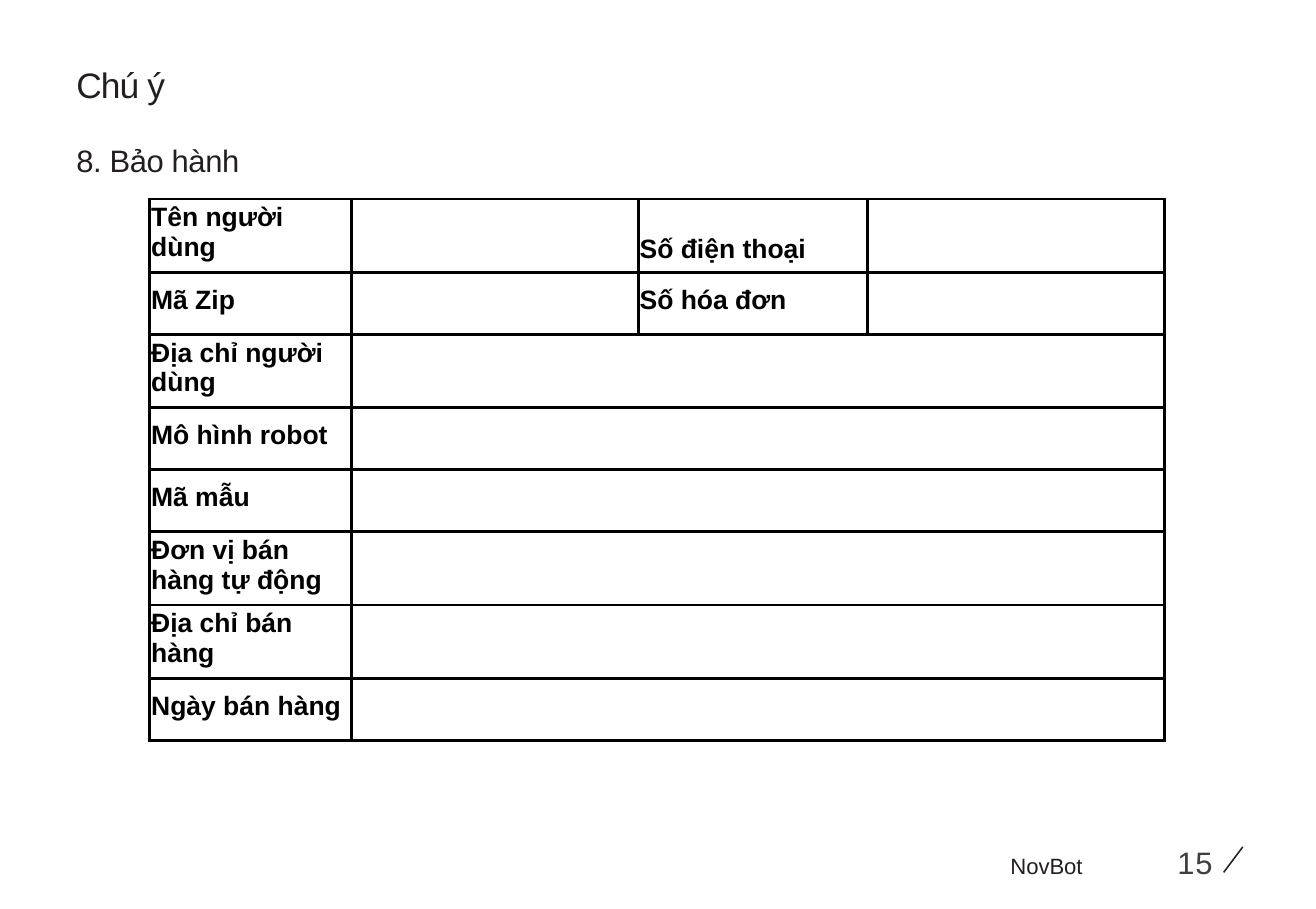
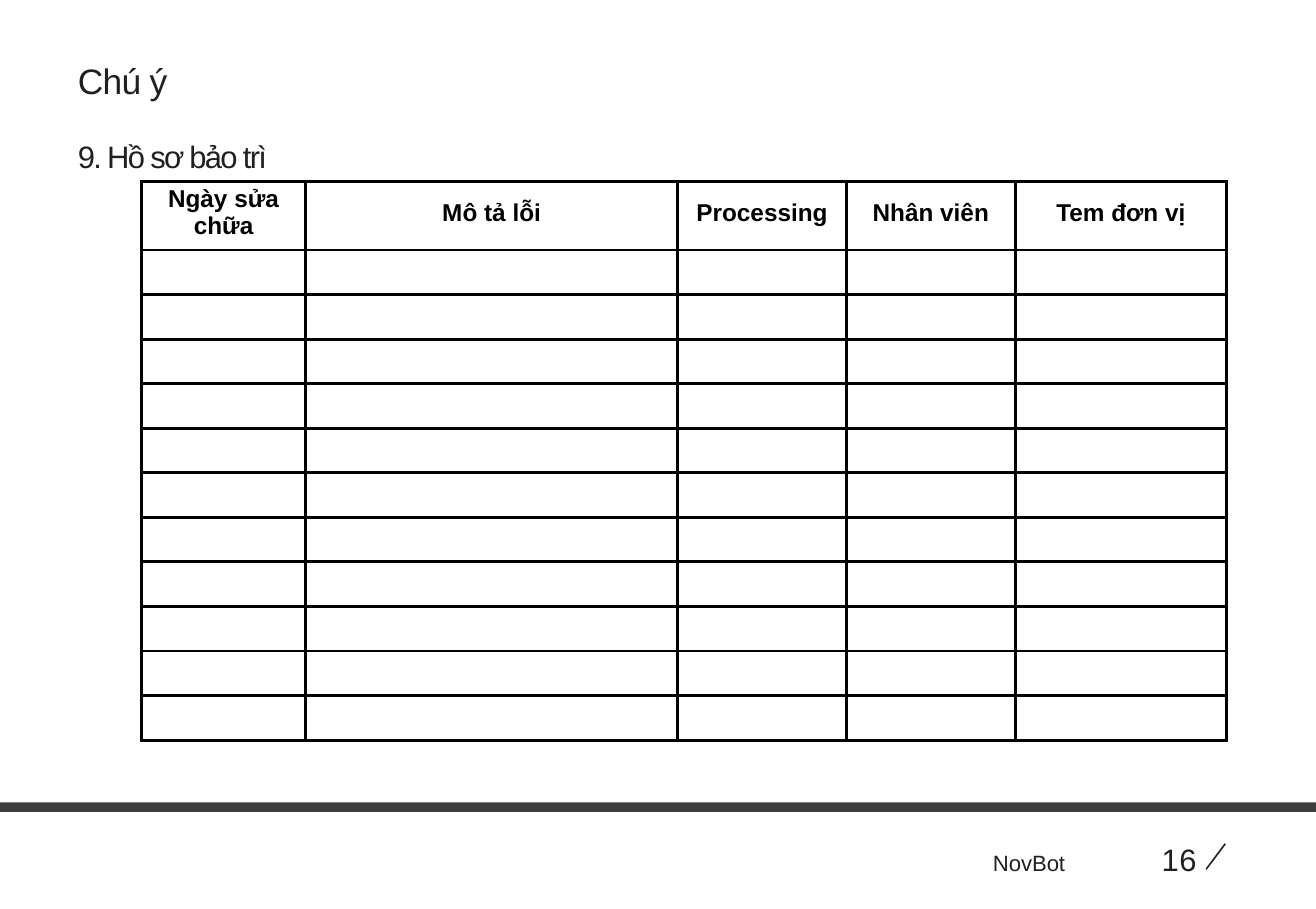
import pptx
import pptx.dml.color
import pptx.enum.shapes
import pptx.enum.text
import pptx.oxml
import pptx.oxml.ns
import pptx.util
from dataclasses import dataclass
from lxml import etree


@dataclass(frozen=True)
class Theme:
    font: str = "Arial"
    ink: str = "231F20"
    band: str = "3E3E3F"
    grid: str = "000000"
    title: int = 16
    section: int = 14
    name: int = 10
    number: int = 14
    border: float = 1.5
    slash: float = 0.71


theme = Theme()
PX = 9144  # one hundredth of an inch
qn = pptx.oxml.ns.qn
ANCHOR = pptx.enum.text.MSO_ANCHOR
ALIGN = pptx.enum.text.PP_ALIGN


def write(para, text, *, size, color=theme.ink, bold=False, spacing=0, align=ALIGN.LEFT):
    """Add one formatted span, or size the paragraph when it has no text."""
    para.alignment = align
    if not text:
        etree.SubElement(para._p, qn("a:endParaRPr"), sz=str(size * 100))
        return
    span = para.add_run()
    span.text = text
    span.font.name = theme.font
    span.font.size = pptx.util.Pt(size)
    span.font.bold = bold
    span.font.color.rgb = pptx.dml.color.RGBColor.from_string(color)
    if spacing:
        span._r.get_or_add_rPr().set("spc", str(round(spacing * 100)))


def add_grid(page, left, top, columns, heights, labels, *, size, align):
    """Add a ruled table; labels holds one list of texts per row."""
    frame = page.shapes.add_table(len(heights), len(columns), left * PX, top * PX,
                                  sum(columns) * PX, sum(heights) * PX)
    table = frame.table
    table.first_row = table.horz_banding = False
    for column, width in zip(table.columns, columns):
        column.width = width * PX
    for row, height, texts in zip(table.rows, heights, labels):
        row.height = height * PX
        for cell, text in zip(row.cells, texts):
            cell.margin_left = cell.margin_right = cell.margin_top = PX
            cell.margin_bottom = 5 * PX
            cell.vertical_anchor = ANCHOR.MIDDLE
            cell.fill.background()
            write(cell.text_frame.paragraphs[0], text, size=size,
                  color=theme.grid, bold=True, align=align)
            for order, side in enumerate(("lnL", "lnR", "lnT", "lnB")):
                line = etree.Element(qn("a:" + side), w=str(round(theme.border * 12700)))
                fill = etree.SubElement(line, qn("a:solidFill"))
                etree.SubElement(fill, qn("a:srgbClr"), val=theme.grid)
                cell._tc.get_or_add_tcPr().insert(order, line)
    return table


deck = pptx.Presentation()
deck.slide_width = 827 * PX
deck.slide_height = 571 * PX

# What differs between the pages
pages = [
    dict(section="8. Bảo hành", head=(48, 40), title_spacing=-0.4, section_spacing=-0.2,
         number="15", number_color=theme.band, foot=(635, 530), tab=105),
    dict(section="9. Hồ sơ bảo trì", head=(49, 37), title_spacing=-0.3, section_spacing=-0.8,
         number="16", number_color=theme.ink, foot=(624, 528), tab=106),
]

# Headings and footers
for item in pages:
    page = deck.slides.add_slide(deck.slide_layouts[6])

    left, top = item["head"]
    box = page.shapes.add_textbox(left * PX, top * PX, 778 * PX, 70 * PX)
    heading = box.text_frame
    footer_left, footer_top = item["foot"]
    box = page.shapes.add_textbox(footer_left * PX, footer_top * PX, 146 * PX, 24 * PX)
    footer = box.text_frame
    for text_frame in (heading, footer):
        text_frame.word_wrap = True
        text_frame.margin_left = text_frame.margin_right = 0
        text_frame.margin_top = text_frame.margin_bottom = 0

    write(heading.paragraphs[0], "Chú ý", size=theme.title, spacing=item["title_spacing"])
    para = heading.add_paragraph()
    para.line_spacing = pptx.util.Pt(33)
    write(para, item["section"], size=theme.section, spacing=item["section_spacing"])

    para = footer.paragraphs[0]
    tabs = etree.SubElement(para._p.get_or_add_pPr(), qn("a:tabLst"))
    etree.SubElement(tabs, qn("a:tab"), pos=str(item["tab"] * PX), algn="l")
    write(para, "NovBot\t", size=theme.name)
    write(para, item["number"], size=theme.number, color=item["number_color"], spacing=0.3)

    # Slash after the page number
    slash_left, slash_top = footer_left + 134, footer_top + 2
    slash = page.shapes.add_connector(
        pptx.enum.shapes.MSO_CONNECTOR.STRAIGHT, (slash_left + 12) * PX, slash_top * PX,
        slash_left * PX, (slash_top + 16) * PX)
    slash.line.width = pptx.util.Pt(theme.slash)
    slash.line.color.rgb = pptx.dml.color.RGBColor.from_string(theme.ink)
    etree.SubElement(slash._element.spPr, qn("a:effectLst"))

warranty_page, service_page = deck.slides

# Warranty form: two rows of paired fields, then full-width fields
warranty_labels = [
    ["Tên người dùng", "", "Số điện thoại", ""],
    ["Mã Zip", "", "Số hóa đơn", ""],
] + [[label, "", "", ""] for label in (
    "Địa chỉ người dùng", "Mô hình robot", "Mã mẫu",
    "Đơn vị bán hàng tự động", "Địa chỉ bán hàng", "Ngày bán hàng")]
one_line, two_lines = 39, 46
warranty_heights = [two_lines, one_line, two_lines, one_line,
                    one_line, two_lines, two_lines, one_line]
warranty = add_grid(warranty_page, 94, 125, [127, 180, 144, 187], warranty_heights,
                    warranty_labels, size=12, align=ALIGN.LEFT)
warranty.cell(0, 2).vertical_anchor = ANCHOR.BOTTOM
for row in range(2, len(warranty_labels)):
    warranty.cell(row, 1).merge(warranty.cell(row, 3))

# Service record: a heading row over empty rows
service_head = ["Ngày sửa chữa", "Mô tả lỗi", "Processing", "Nhân viên", "Tem đơn vị"]
empty_rows = 11
add_grid(service_page, 89, 114, [103, 234, 106, 106, 133], [43] + [28] * empty_rows,
         [service_head] + [[""] * len(service_head)] * empty_rows,
         size=11, align=ALIGN.CENTER)

# Band above the footer
band = service_page.shapes.add_shape(
    pptx.enum.shapes.MSO_SHAPE.RECTANGLE, 0, 504 * PX, 827 * PX, 6 * PX)
band.shadow.inherit = False
band.fill.solid()
band.fill.fore_color.rgb = pptx.dml.color.RGBColor.from_string(theme.band)
band.line.fill.background()

deck.save("out.pptx")
